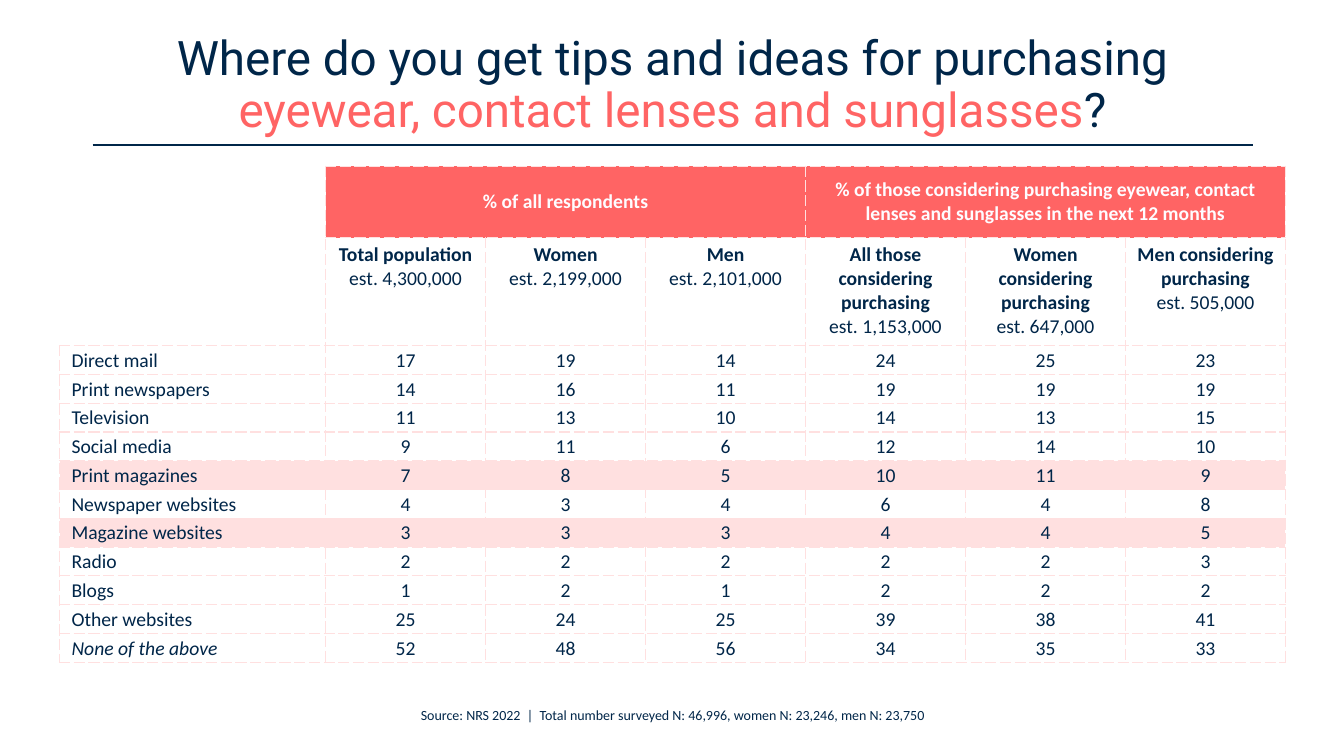
from lxml.etree import SubElement
from pptx import Presentation
from pptx.dml.color import RGBColor
from pptx.enum.shapes import MSO_CONNECTOR
from pptx.enum.text import MSO_ANCHOR, MSO_AUTO_SIZE, PP_ALIGN
from pptx.oxml.ns import qn
from pptx.util import Inches, Pt

COLORS = {"navy": "002649", "coral": "FF6464", "blush": "FFE0E0",
          "white": "FFFFFF", "heading": "FEFCFF"}

GROUPS = [
    "% of all respondents",
    "% of those considering purchasing eyewear, contact lenses and sunglasses "
    "in the next 12 months",
]
AUDIENCES = [
    ("Total population", "est. 4,300,000"),
    ("Women", "est. 2,199,000"),
    ("Men", "est. 2,101,000"),
    ("All those considering purchasing", "est. 1,153,000"),
    ("Women considering purchasing", "est. 647,000"),
    ("Men considering purchasing", "est. 505,000"),
]
SOURCES = [
    ("Direct mail", 17, 19, 14, 24, 25, 23),
    ("Print newspapers", 14, 16, 11, 19, 19, 19),
    ("Television", 11, 13, 10, 14, 13, 15),
    ("Social media", 9, 11, 6, 12, 14, 10),
    ("Print magazines", 7, 8, 5, 10, 11, 9),
    ("Newspaper websites", 4, 3, 4, 6, 4, 8),
    ("Magazine websites", 3, 3, 3, 4, 4, 5),
    ("Radio", 2, 2, 2, 2, 2, 3),
    ("Blogs", 1, 2, 1, 2, 2, 2),
    ("Other websites", 25, 24, 25, 39, 38, 41),
    ("None of the above", 52, 48, 56, 34, 35, 33),
]
HIGHLIGHTED = {"Print magazines", "Magazine websites"}
ITALIC = {"None of the above"}
HEADER_HEIGHTS = [0.71, 1.07]
BODY_HEIGHT = 3.14
LABEL_WIDTH = 2.64
VALUES_WIDTH = 9.52


def rgb(name):
    return RGBColor.from_string(COLORS[name])


class SurveySlide:
    def __init__(self, presentation):
        self.slide = presentation.slides.add_slide(presentation.slide_layouts[6])

    def style(self, paragraph, size, font="Calibri", color="navy",
              align=PP_ALIGN.CENTER):
        paragraph.alignment = align
        paragraph.font.size = Pt(size)
        paragraph.font.name = font
        paragraph.font.color.rgb = rgb(color)

    def text(self, left, top, width, height, parts, size, font, wrap=True,
             anchor=MSO_ANCHOR.TOP, line_spacing=1.0):
        """Add a centred text box from (text, colour) parts."""
        box = self.slide.shapes.add_textbox(
            Inches(left), Inches(top), Inches(width), Inches(height))
        frame = box.text_frame
        frame.word_wrap = wrap
        frame.vertical_anchor = anchor
        frame.auto_size = MSO_AUTO_SIZE.NONE if wrap else MSO_AUTO_SIZE.SHAPE_TO_FIT_TEXT
        paragraph = frame.paragraphs[0]
        self.style(paragraph, size, font)
        paragraph.line_spacing = line_spacing
        for words, color in parts:
            run = paragraph.add_run()
            run.text = words
            if color != "navy":
                run.font.color.rgb = rgb(color)

    def rule(self, left, right, y):
        line = self.slide.shapes.add_connector(
            MSO_CONNECTOR.STRAIGHT, Inches(left), Inches(y), Inches(right), Inches(y))
        line.line.color.rgb = rgb("navy")
        line.line.width = Pt(1)
        SubElement(line._element.spPr, qn("a:effectLst"))

    def borders(self, cell, sides):
        properties = cell._tc.get_or_add_tcPr()
        for side in sides:
            border = SubElement(properties, qn(f"a:ln{side}"), w=str(Pt(1)))
            fill = SubElement(border, qn("a:solidFill"))
            SubElement(fill, qn("a:srgbClr"), val=COLORS["blush"])
            SubElement(border, qn("a:prstDash"), val="sysDash")

    def cell(self, cell, words, fill="white", color="navy", align=PP_ALIGN.CENTER,
             bold=False, italic=False, anchor=MSO_ANCHOR.MIDDLE):
        cell.fill.solid()
        cell.fill.fore_color.rgb = rgb(fill)
        cell.vertical_anchor = anchor
        paragraph = cell.text_frame.paragraphs[0]
        self.style(paragraph, 14, color=color, align=align)
        paragraph.font.bold = bold
        paragraph.font.italic = italic
        paragraph.add_run().text = words
        return paragraph

    def audience(self, cell, name, estimate):
        paragraph = self.cell(cell, name, anchor=MSO_ANCHOR.TOP)
        paragraph.runs[0].font.bold = True
        paragraph.add_line_break()
        paragraph.add_run().text = estimate

    def source_row(self, cells, row):
        fill = "blush" if row[0] in HIGHLIGHTED else "white"
        for column, (cell, value) in enumerate(zip(cells, row)):
            is_label = column == 0
            self.cell(cell, str(value), fill,
                      align=PP_ALIGN.LEFT if is_label else PP_ALIGN.CENTER,
                      italic=value in ITALIC)
            cell.margin_left = Inches(0.12 if is_label else 0.01)
            cell.margin_right = cell.margin_top = Inches(0.01)
            cell.margin_bottom = 0

    def table(self, left, top):
        heights = HEADER_HEIGHTS + [BODY_HEIGHT / len(SOURCES)] * len(SOURCES)
        widths = [LABEL_WIDTH] + [VALUES_WIDTH / len(AUDIENCES)] * len(AUDIENCES)
        table = self.slide.shapes.add_table(
            len(heights), len(widths), Inches(left), Inches(top),
            Inches(sum(widths)), Inches(sum(heights))).table
        table.first_row = table.horz_banding = False
        for row, height in zip(table.rows, heights):
            row.height = Inches(height)
        for column, width in zip(table.columns, widths):
            column.width = Inches(width)

        for r in range(len(heights)):
            for c in range(len(widths)):
                is_corner = c == 0 and r < len(HEADER_HEIGHTS)
                self.borders(table.cell(r, c), "RB" if is_corner else "LRTB")

        corner = table.cell(0, 0)
        corner.merge(table.cell(1, 0))
        corner.fill.solid()
        corner.fill.fore_color.rgb = rgb("white")
        span = len(AUDIENCES) // len(GROUPS)
        for index, group in enumerate(GROUPS):
            first = 1 + index * span
            heading = table.cell(0, first)
            heading.merge(table.cell(0, first + span - 1))
            self.cell(heading, group, "coral", "heading", bold=True)
        for column, (name, estimate) in enumerate(AUDIENCES, start=1):
            self.audience(table.cell(1, column), name, estimate)
        for r, source in enumerate(SOURCES, start=len(HEADER_HEIGHTS)):
            self.source_row(table.rows[r].cells, source)


def main():
    presentation = Presentation()
    presentation.slide_width = Inches(13.33)
    presentation.slide_height = Inches(7.5)
    survey = SurveySlide(presentation)
    survey.text(0.92, 0.32, 11.5, 1.07, [
        ("Where do you get tips and ideas for purchasing ", "navy"),
        ("eyewear, contact lenses and sunglasses", "coral"),
        ("?", "navy"),
    ], 34, "Roboto", anchor=MSO_ANCHOR.MIDDLE, line_spacing=0.9)
    survey.table(0.59, 1.65)
    survey.rule(0.92, 12.43, 1.44)
    survey.text(3.82, 6.96, 5.7, 0.27, [
        ("Source: NRS 2022  |  Total number surveyed N: 46,996, "
         "women N: 23,246, men N: 23,750", "navy"),
    ], 10, "Calibri", wrap=False)
    presentation.save("out.pptx")


if __name__ == "__main__":
    main()
